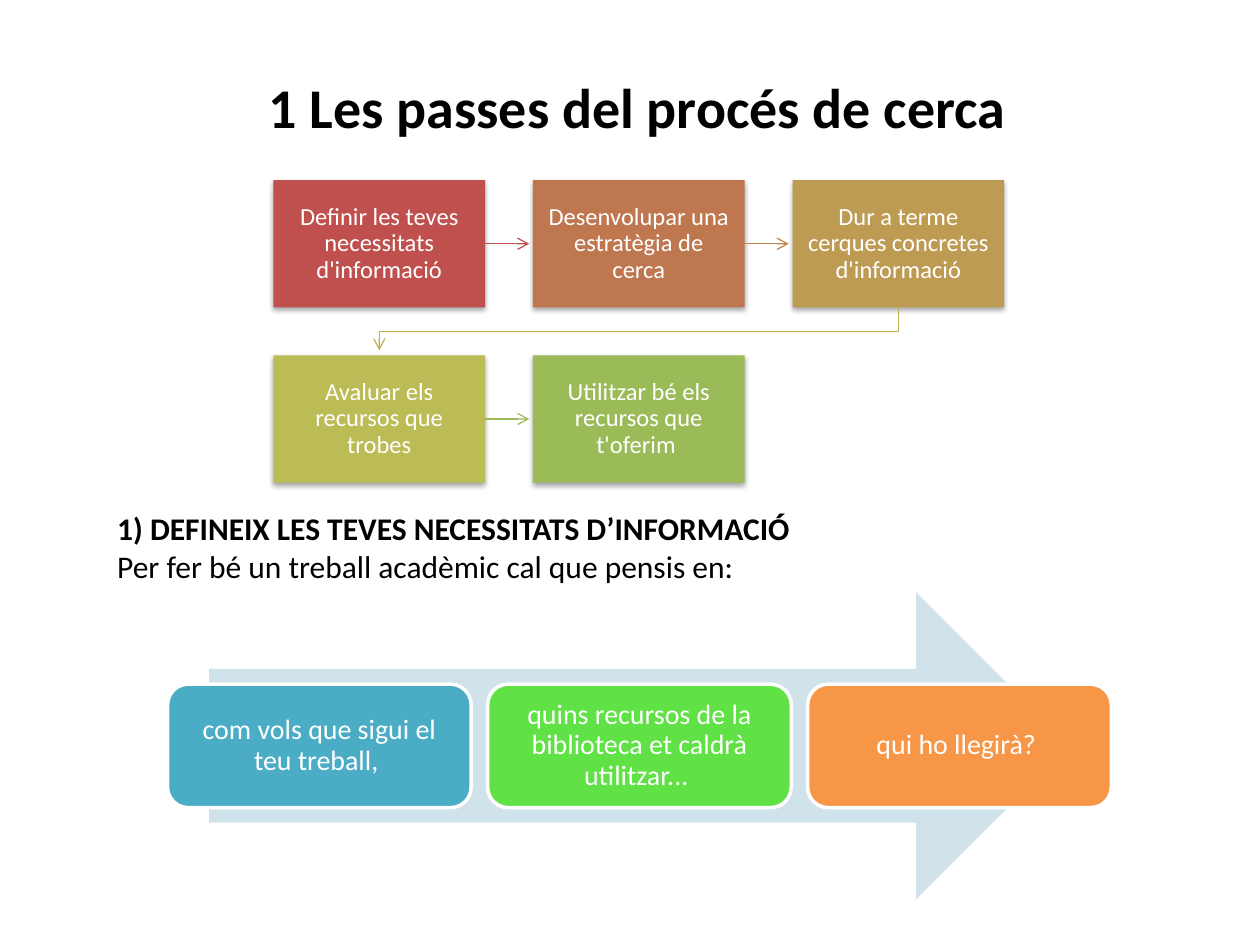
import pptx
import pptx.util
import pptx.dml.color
import pptx.enum.shapes
import pptx.enum.text
import pptx.oxml
import pptx.oxml.ns
from lxml import etree

Inches = pptx.util.Inches
Kind = pptx.enum.shapes.MSO_SHAPE
Align = pptx.enum.text.PP_ALIGN
Anchor = pptx.enum.text.MSO_ANCHOR

INK = {
    "black": "000000", "white": "FFFFFF", "red": "C0504D", "rust": "BF7750",
    "tan": "BD9B53", "olive": "BCBC56", "leaf": "9BBB59", "clay": "BE8351",
    "sand": "BDB255", "pale": "D0E3EA", "teal": "4BACC6", "lime": "60E146",
    "orange": "F79646",
}
STEPS = [
    ("Definir les teves necessitats d'informació", "red"),
    ("Desenvolupar una estratègia de cerca", "rust"),
    ("Dur a terme cerques concretes d'informació", "tan"),
    ("Avaluar els recursos que trobes", "olive"),
    ("Utilitzar bé els recursos que t'oferim ", "leaf"),
]
LINKS = ["red", "clay", "sand", "leaf"]
ASKS = [
    ("com vols que sigui el teu treball, ", "teal"),
    ("quins recursos de la biblioteca et caldrà utilitzar... ", "lime"),
    ("qui ho llegirà? ", "orange"),
]


def tint(name):
    return pptx.dml.color.RGBColor.from_string(INK[name])


def child(node, tag, **attrs):
    return etree.SubElement(node, pptx.oxml.ns.qn("a:" + tag), attrs)


def write(para, text, size, color, bold=False):
    run = para.add_run()
    run.text = text
    font = run.font
    font.name, font.size, font.bold = "Calibri", pptx.util.Pt(size), bold
    font.color.rgb = tint(color)


def place(item, box):
    item.left, item.top, item.width, item.height = map(Inches, box)


def block(slide, kind, box, color):
    item = slide.shapes.add_shape(kind, *map(Inches, box))
    item.shadow.inherit = False
    item.fill.solid()
    item.fill.fore_color.rgb = tint(color)
    item.line.fill.background()
    return item


def label(item, text, size, inset):
    frame = item.text_frame
    frame.word_wrap = True
    frame.vertical_anchor = Anchor.MIDDLE
    frame.margin_left = frame.margin_right = Inches(inset)
    frame.margin_top = frame.margin_bottom = Inches(inset)
    para = frame.paragraphs[0]
    para.alignment = Align.CENTER
    para.line_spacing = 0.9
    write(para, text, size, "white")


def shade(item):
    effects = item._element.spPr.find(pptx.oxml.ns.qn("a:effectLst"))
    drop = child(effects, "outerShdw", blurRad="40000", dist="23000",
                 dir="5400000", rotWithShape="0")
    child(child(drop, "srgbClr", val=INK["black"]), "alpha", val="35000")


def finish(item, color):
    item.line.color.rgb = tint(color)
    item.line.width = pptx.util.Pt(0.75)
    child(item.line._get_or_add_ln(), "tailEnd", type="arrow")


def link(slide, start, end, color):
    item = slide.shapes.add_connector(
        pptx.enum.shapes.MSO_CONNECTOR.STRAIGHT, *map(Inches, start + end))
    finish(item, color)
    child(item._element.spPr, "effectLst")


def bend(slide, points, color):
    spots = [tuple(map(Inches, point)) for point in points]
    pen = slide.shapes.build_freeform(*spots[0])
    pen.add_line_segments(spots[1:], close=False)
    item = pen.convert_to_shape()
    item.shadow.inherit = False
    item.fill.background()
    finish(item, color)


def heading(slide, box):
    title = slide.shapes.title
    place(title, box)
    frame = title.text_frame
    frame.auto_size = pptx.enum.text.MSO_AUTO_SIZE.NONE
    frame.word_wrap = False
    frame.vertical_anchor = Anchor.MIDDLE
    para = frame.paragraphs[0]
    para.alignment = Align.CENTER
    write(para, "1 Les passes del procés de cerca", 32, "black", True)


def intro(slide, box):
    body = slide.placeholders[1]
    place(body, box)
    frame = body.text_frame
    frame.auto_size = pptx.enum.text.MSO_AUTO_SIZE.NONE
    lines = [("1) DEFINEIX LES TEVES NECESSITATS D’INFORMACIÓ", True),
             ("Per fer bé un treball acadèmic cal que pensis en:", False)]
    for i, (text, bold) in enumerate(lines):
        para = frame.add_paragraph() if i else frame.paragraphs[0]
        para.space_before = pptx.util.Pt(0)
        props = para._p.get_or_add_pPr()
        props.set("marL", "0")
        props.set("indent", "0")
        child(props, "buNone")
        write(para, text, 18, "black", bold)


def flow(slide, box):
    left, top, width, height = box
    wide, high, cols = 1.68, 1.01, 3
    across = (width - wide) / (cols - 1)
    down = height - high
    spots = [(left + i % cols * across, top + i // cols * down)
             for i in range(len(STEPS))]
    for (x, y), (text, color) in zip(spots, STEPS):
        item = block(slide, Kind.RECTANGLE, (x, y, wide, high), color)
        shade(item)
        label(item, text, 14, 0.11)
    for (x, y), (tox, toy), color in zip(spots, spots[1:], LINKS):
        if y == toy:
            mid = y + high / 2
            link(slide, (x + wide, mid), (tox - 0.03, mid), color)
        else:
            half = (y + high + toy) / 2
            out, into = x + wide / 2, tox + wide / 2
            bend(slide, [(out, y + high), (out, half), (into, half),
                         (into, toy - 0.04)], color)


def march(slide, box):
    left, top, width, height = box
    inset, wide, high = 0.33, 2.41, 0.98
    block(slide, Kind.RIGHT_ARROW,
          (left + inset, top, width - 2 * inset, height), "pale")
    step = (width - wide) / (len(ASKS) - 1)
    for i, (text, color) in enumerate(ASKS):
        spot = (left + i * step, top + (height - high) / 2, wide, high)
        item = block(slide, Kind.ROUNDED_RECTANGLE, spot, color)
        item.line.color.rgb = tint("white")
        item.line.width = pptx.util.Pt(2)
        label(item, text, 16, 0.07)


def main():
    deck = pptx.Presentation()
    deck.slide_width, deck.slide_height = Inches(10), Inches(7.5)
    slide = deck.slides.add_slide(deck.slide_layouts[1])
    heading(slide, (2.01, 0.52, 6.1, 0.64))
    intro(slide, (0.83, 3.99, 6.54, 1.01))
    flow(slide, (2.17, 1.43, 5.8, 2.4))
    march(slide, (1.33, 4.7, 7.49, 2.44))
    deck.save("out.pptx")


if __name__ == "__main__":
    main()
